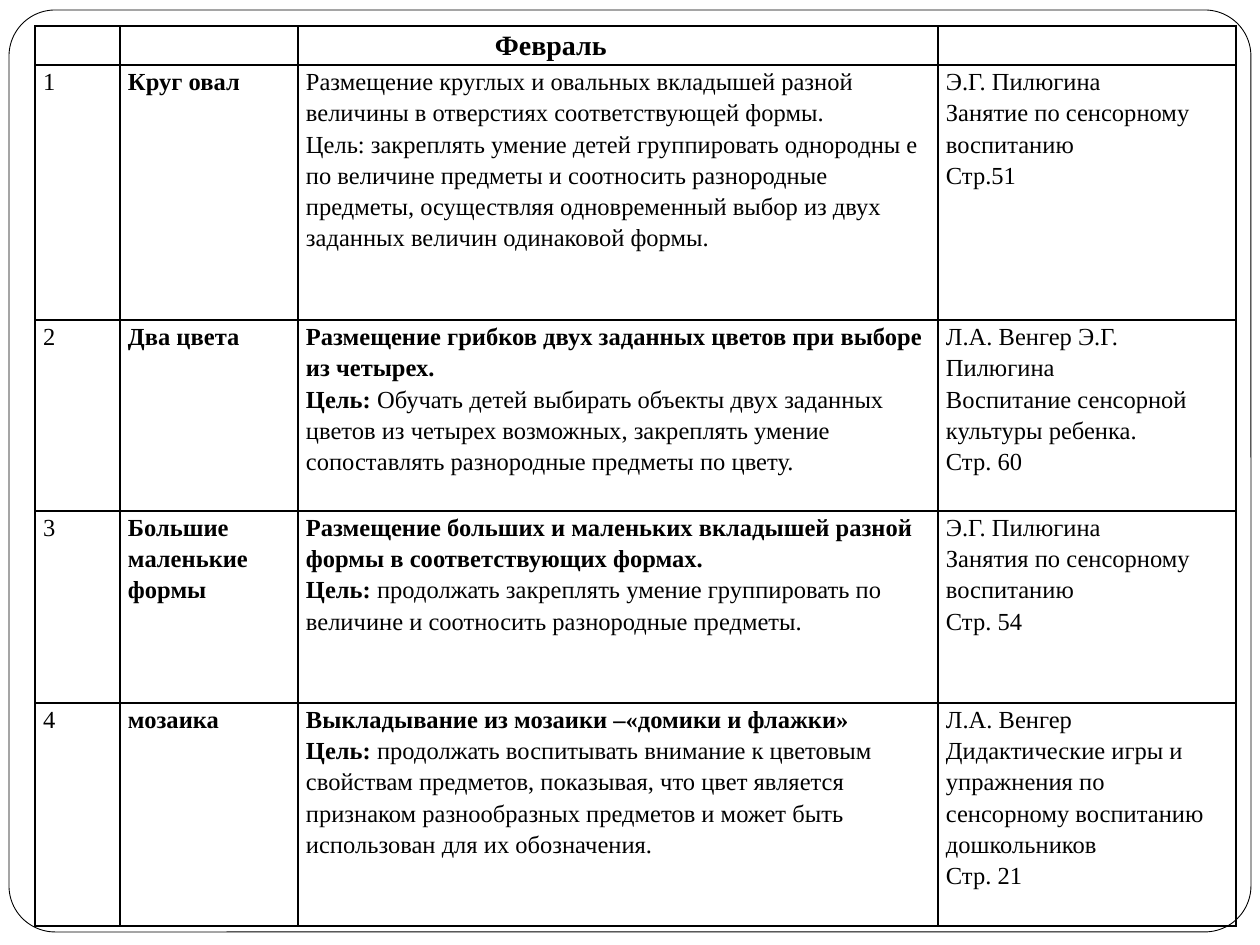
from lxml import etree
from pptx import Presentation
from pptx.dml.color import RGBColor
from pptx.enum.shapes import MSO_SHAPE
from pptx.oxml.ns import qn
from pptx.util import Pt

BLACK = RGBColor(0x00, 0x00, 0x00)
WHITE = RGBColor(0xFF, 0xFF, 0xFF)
ROUNDED = MSO_SHAPE.ROUNDED_RECTANGLE
BLANK_LAYOUT = 6
EMU_PER_PX = 914400 / 126

COLUMNS = [85, 178, 640, 298]
ROWS = [39, 255, 191, 192, 223]
MONTH = "Февраль"
MONTH_INDENT = 189

# Each lesson: name, description as (bold, plain) paragraphs, source lines
LESSONS = [
    ("Круг овал",
     [("", "Размещение круглых и овальных вкладышей разной величины в отверстиях "
           "соответствующей формы."),
      ("", "Цель: закреплять умение детей группировать однородны е по величине предметы "
           "и соотносить разнородные предметы, осуществляя одновременный выбор из двух "
           "заданных величин одинаковой формы.")],
     ["Э.Г. Пилюгина", "Занятие по сенсорному воспитанию", "Стр.51"]),
    ("Два цвета",
     [("Размещение грибков двух заданных цветов при выборе из четырех.", ""),
      ("Цель:", " Обучать детей выбирать объекты двух заданных цветов из четырех "
                "возможных, закреплять умение сопоставлять разнородные предметы по цвету.")],
     ["Л.А. Венгер Э.Г. Пилюгина", "Воспитание сенсорной культуры ребенка.", "Стр. 60"]),
    ("Большие маленькие формы",
     [("Размещение больших и маленьких вкладышей разной формы в соответствующих формах.", ""),
      ("Цель:", " продолжать закреплять умение группировать по величине и соотносить "
                "разнородные предметы.")],
     ["Э.Г. Пилюгина", "Занятия по сенсорному воспитанию", "Стр. 54"]),
    ("мозаика",
     [("Выкладывание из мозаики –«домики и флажки»", ""),
      ("Цель:", " продолжать воспитывать внимание к цветовым свойствам предметов, "
                "показывая, что цвет является признаком разнообразных предметов и может "
                "быть использован для их обозначения.")],
     ["Л.А. Венгер", "Дидактические игры и упражнения по сенсорному воспитанию дошкольников",
      "Стр. 21"]),
]


def px(n):
    return round(n * EMU_PER_PX)


class Page:
    font = "Times New Roman"
    size = 14
    spacing = 1.15
    inset = 8

    def __init__(self, slide):
        self.slide = slide

    def frame(self, x, y, w, h):
        s = self.slide.shapes.add_shape(ROUNDED, px(x), px(y), px(w), px(h))
        s.adjustments[0] = 0.05
        s.shadow.inherit = False
        s.fill.solid()
        s.fill.fore_color.rgb = WHITE
        s.line.color.rgb = BLACK
        s.line.width = Pt(0.5)

    def table(self, x, y, columns, rows):
        table = self.slide.shapes.add_table(
            len(rows), len(columns), px(x), px(y), px(sum(columns)), px(sum(rows))).table
        table.first_row = table.horz_banding = False
        for column, width in zip(table.columns, columns):
            column.width = px(width)
        for row, height in zip(table.rows, rows):
            row.height = px(height)
        for cell in table.iter_cells():
            self.style_cell(cell)
        return table

    def style_cell(self, cell):
        cell.margin_left = cell.margin_right = px(self.inset)
        cell.margin_top = cell.margin_bottom = 0
        tc_pr = cell._tc.get_or_add_tcPr()
        for side in ("a:lnL", "a:lnR", "a:lnT", "a:lnB"):
            ln = etree.SubElement(tc_pr, qn(side), w=str(Pt(1)))
            fill = etree.SubElement(ln, qn("a:solidFill"))
            etree.SubElement(fill, qn("a:srgbClr"), val=str(BLACK))
        cell.fill.background()
        # Keeps empty cells from stretching their row
        p = cell.text_frame.paragraphs[0]
        etree.SubElement(p._p, qn("a:endParaRPr"), sz=str(self.size * 100))

    def cell_text(self, cell, paragraphs, size=None, indent=0):
        tf = cell.text_frame
        for i, (bold, plain) in enumerate(paragraphs):
            p = tf.add_paragraph() if i else tf.paragraphs[0]
            p.line_spacing = self.spacing
            if indent:
                p._p.get_or_add_pPr().set("marL", str(px(indent)))
            for text, is_bold in ((bold, True), (plain, False)):
                if text:
                    r = p.add_run()
                    r.text = text
                    r.font.name = self.font
                    r.font.size = Pt(size or self.size)
                    r.font.bold = is_bold
                    r.font.color.rgb = BLACK


def main():
    prs = Presentation()
    prs.slide_width, prs.slide_height = px(1260), px(945)
    page = Page(prs.slides.add_slide(prs.slide_layouts[BLANK_LAYOUT]))

    # Rounded page frame
    page.frame(9, 10, 1242, 922)

    # Month heading and the lessons
    table = page.table(35, 26, COLUMNS, ROWS)
    page.cell_text(table.cell(0, 2), [(MONTH, "")], size=16, indent=MONTH_INDENT)
    for n, (name, description, source) in enumerate(LESSONS, start=1):
        page.cell_text(table.cell(n, 0), [("", str(n))])
        page.cell_text(table.cell(n, 1), [(name, "")])
        page.cell_text(table.cell(n, 2), description)
        page.cell_text(table.cell(n, 3), [("", line) for line in source])

    prs.save("out.pptx")


if __name__ == "__main__":
    main()
